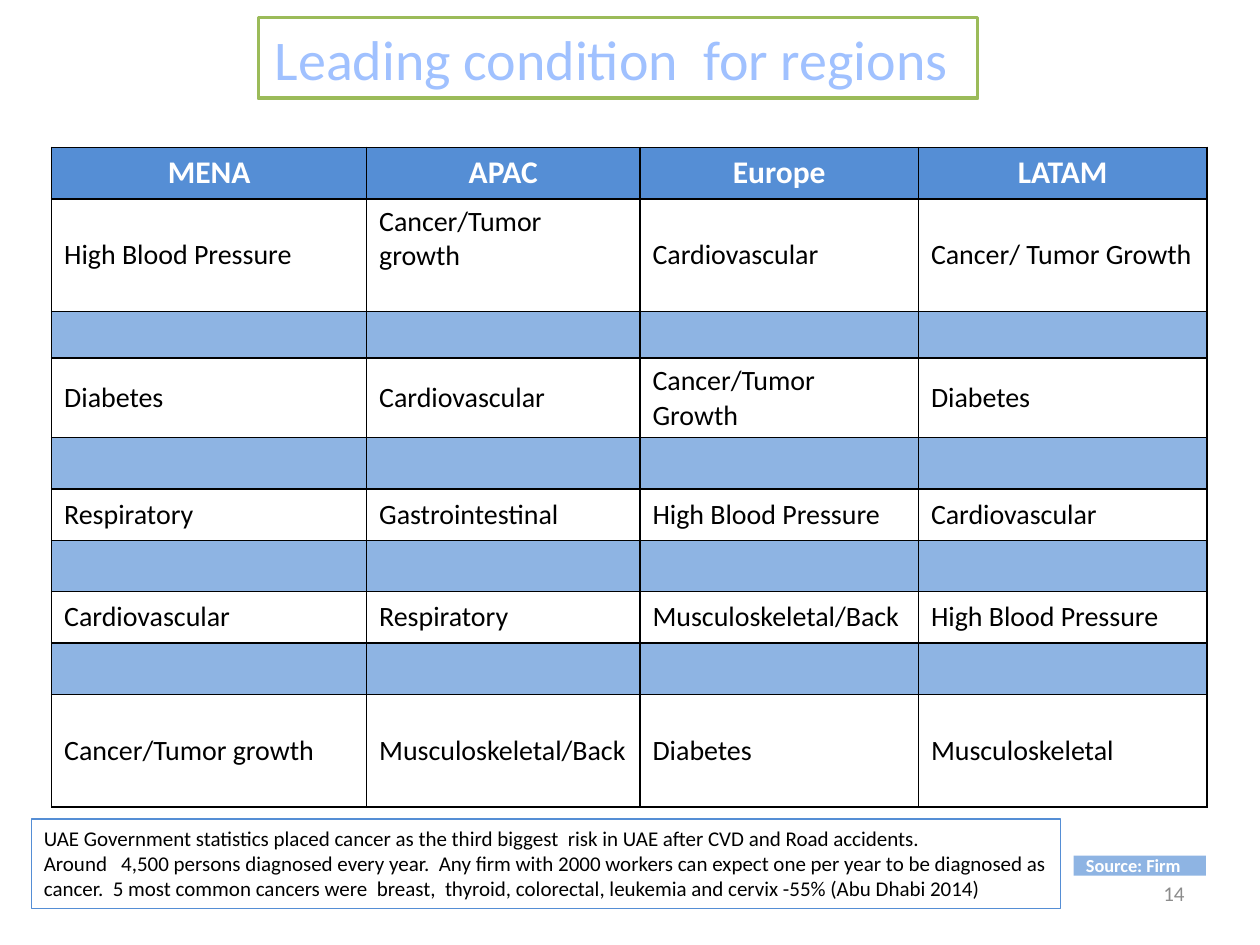
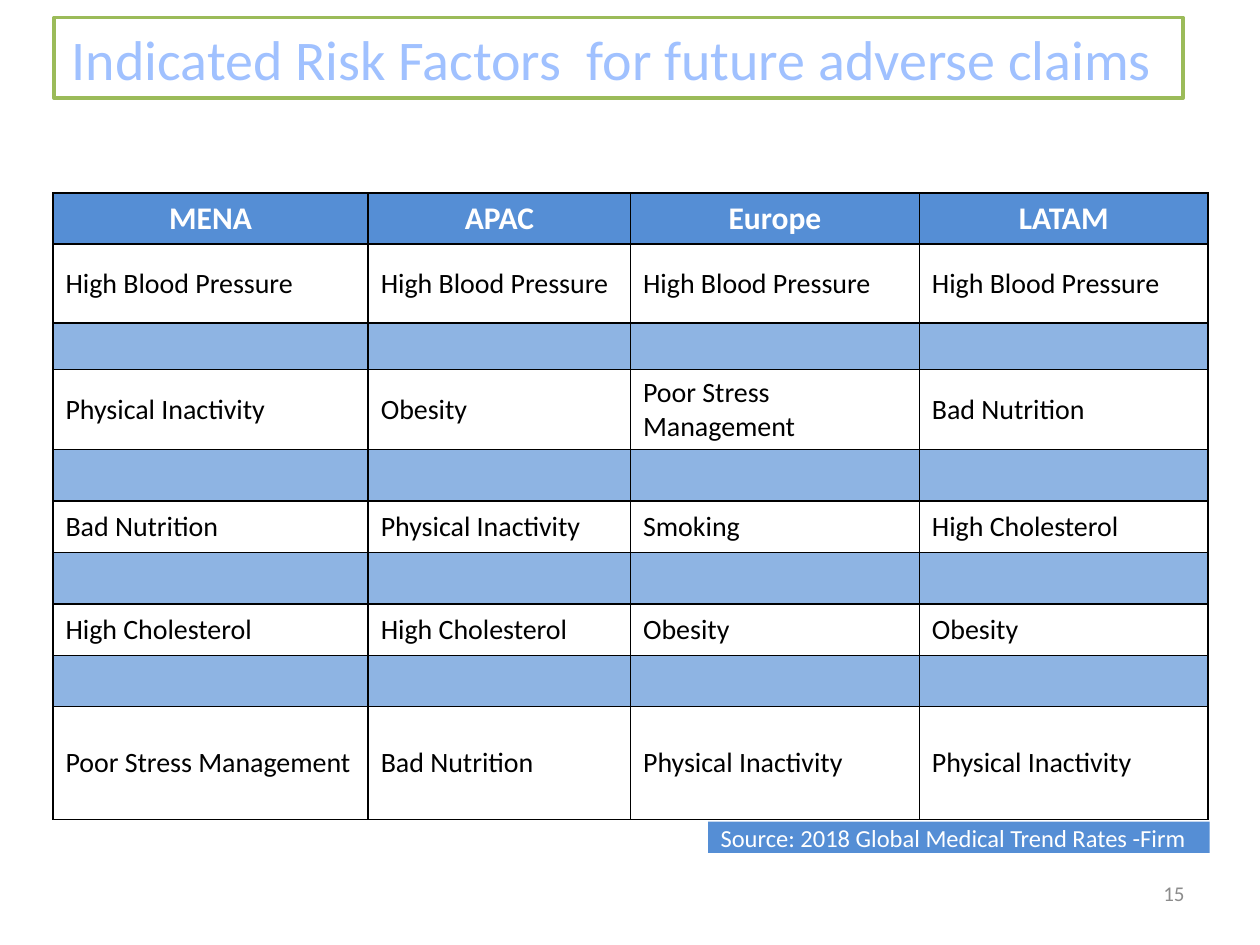
"""Build two slides that compare leading conditions and risk factors by region."""

from dataclasses import dataclass
from typing import Optional

from lxml.etree import SubElement
from pptx import Presentation
from pptx.dml.color import RGBColor
from pptx.enum.shapes import MSO_SHAPE
from pptx.enum.text import MSO_ANCHOR, PP_ALIGN
from pptx.oxml import parse_xml
from pptx.oxml.ns import nsdecls, qn
from pptx.util import Inches, Pt

SLIDE_WIDTH = Inches(10)
SLIDE_HEIGHT = Inches(7.5)
COLUMN = SLIDE_WIDTH / 100
ROW = SLIDE_HEIGHT / 75

FONT = "Calibri"
WHITE = RGBColor(0xFF, 0xFF, 0xFF)
BLACK = RGBColor(0x00, 0x00, 0x00)
GREY = RGBColor(0x8C, 0x8C, 0x8C)
GREEN = RGBColor(0x9B, 0xBB, 0x59)
BLUE = RGBColor(0x55, 0x8E, 0xD5)
PALE_BLUE = RGBColor(0x8E, 0xB4, 0xE3)
TITLE_OUTLINE = RGBColor(0x46, 0x7A, 0xB8)
SKY = RGBColor(0xA0, 0xC1, 0xFF)
MIST = RGBColor(0xBF, 0xD3, 0xF9)
NAVY = RGBColor(0x00, 0x3D, 0x85)
TITLE_GRADIENT = ((0, MIST), (9, SKY), (50, NAVY), (79, SKY), (100, MIST))

REGIONS = ("MENA", "APAC", "Europe", "LATAM")
HEADER_ROW, SPACER_ROW = 4.1, 4.1


@dataclass(frozen=True)
class Area:
    """A rectangle in grid columns and rows."""

    left: float
    top: float
    width: float
    height: float

    def place(self) -> tuple[int, int, int, int]:
        """Return left, top, width and height as lengths."""
        return (int(self.left * COLUMN), int(self.top * ROW),
                int(self.width * COLUMN), int(self.height * ROW))


@dataclass(frozen=True)
class Source:
    """The credit strip under a table."""

    text: str
    area: Area
    fill: RGBColor
    size: float
    bold: bool = False


@dataclass(frozen=True)
class RegionSlide:
    """One slide with a ranking for each region."""

    number: int
    title: str
    title_area: Area
    table_area: Area
    column_shares: tuple[float, ...]
    first_rank_height: float
    ranks: tuple[tuple[str, ...], ...]
    source: Source
    note: tuple[str, ...] = ()
    top_cell: Optional[tuple[int, int]] = None


NUMBER_AREA = Area(71.7, 68.3, 23.3, 5.2)
NOTE_AREA = Area(2.5, 65, 81.7, 7.1)

SLIDES = (
    RegionSlide(
        14, "Leading condition  for regions ", Area(20.5, 1.4, 57.1, 6.4),
        Area(4.1, 11.7, 91.7, 52.3), (25, 21.7, 22.1, 22.9), 9,
        (
            ("High Blood Pressure", "Cancer/Tumor growth", "Cardiovascular", "Cancer/ Tumor Growth"),
            ("Diabetes", "Cardiovascular", "Cancer/Tumor  Growth", "Diabetes"),
            ("Respiratory", "Gastrointestinal", "High Blood Pressure", "Cardiovascular"),
            ("Cardiovascular", "Respiratory", "Musculoskeletal/Back", "High Blood Pressure"),
            ("Cancer/Tumor growth", "Musculoskeletal/Back", "Diabetes", "Musculoskeletal"),
        ),
        Source("Source: Firm", Area(85.2, 67.9, 10.5, 1.6), PALE_BLUE, 10.5, True),
        note=(
            "UAE Government statistics placed cancer as the third biggest  risk in UAE "
            "after CVD and Road accidents.",
            "Around   4,500 persons diagnosed every year.  Any firm with 2000 workers can "
            "expect one per year to be diagnosed as cancer.  5 most common cancers were  "
            "breast,  thyroid, colorectal, leukemia and cervix -55% (Abu Dhabi 2014)",
        ),
        top_cell=(1, 1),
    ),
    RegionSlide(
        15, "Indicated Risk Factors  for future adverse claims ", Area(4.3, 1.4, 89.6, 6.4),
        Area(4.2, 15.3, 91.7, 49.7), (25, 20.8, 22.9, 22.9), 6.3,
        (
            ("High Blood Pressure",) * 4,
            ("Physical Inactivity", "Obesity", "Poor Stress Management", "Bad Nutrition"),
            ("Bad Nutrition", "Physical Inactivity", "Smoking", "High Cholesterol"),
            ("High Cholesterol", "High Cholesterol", "Obesity", "Obesity"),
            ("Poor Stress Management", "Bad Nutrition", "Physical Inactivity", "Physical Inactivity"),
        ),
        Source("Source: 2018 Global Medical Trend Rates -Firm", Area(56.2, 65.2, 39.8, 2.5), BLUE, 14),
    ),
)


def write(frame, *lines: str, size: float, color: RGBColor, bold: bool = False,
          align: PP_ALIGN = PP_ALIGN.LEFT) -> None:
    """Fill a text frame with one paragraph for each line."""
    for index, line in enumerate(lines):
        paragraph = frame.paragraphs[0] if index == 0 else frame.add_paragraph()
        paragraph.alignment = align
        run = paragraph.add_run()
        run.text = line
        run.font.name = FONT
        run.font.size = Pt(size)
        run.font.bold = bold
        run.font.color.rgb = color


def add_panel(slide, area: Area, fill: Optional[RGBColor] = None,
              line: Optional[RGBColor] = None, line_width: float = 0.75,
              anchor: MSO_ANCHOR = MSO_ANCHOR.MIDDLE, wrap: bool = True):
    """Draw a flat rectangle and return its text frame."""
    panel = slide.shapes.add_shape(MSO_SHAPE.RECTANGLE, *area.place())
    panel.shadow.inherit = False
    if fill is None:
        panel.fill.background()
    else:
        panel.fill.solid()
        panel.fill.fore_color.rgb = fill
    if line is None:
        panel.line.fill.background()
    else:
        panel.line.color.rgb = line
        panel.line.width = Pt(line_width)
    panel.text_frame.word_wrap = wrap
    panel.text_frame.vertical_anchor = anchor
    return panel.text_frame


def add_title(slide, text: str, area: Area) -> None:
    """Draw the framed title with gradient lettering."""
    frame = add_panel(slide, area, WHITE, GREEN, 2, wrap=False)
    write(frame, text, size=32, color=SKY, align=PP_ALIGN.CENTER)
    properties = frame.paragraphs[0].runs[0].font.fill._xPr
    solid = properties.find(qn("a:solidFill"))
    stops = "".join(f'<a:gs pos="{share * 1000}"><a:srgbClr val="{color}"/></a:gs>'
                    for share, color in TITLE_GRADIENT)
    solid.addprevious(parse_xml(
        f'<a:ln {nsdecls("a")} w="{Pt(0.83)}"><a:solidFill>'
        f'<a:srgbClr val="{TITLE_OUTLINE}"/></a:solidFill></a:ln>'))
    properties.replace(solid, parse_xml(
        f'<a:gradFill {nsdecls("a")}><a:gsLst>{stops}</a:gsLst>'
        '<a:lin ang="5400000"/></a:gradFill>'))


def style_cell(cell, fill: RGBColor) -> None:
    """Give a cell black borders and a solid fill."""
    properties = cell._tc.get_or_add_tcPr()
    for side in ("lnL", "lnR", "lnT", "lnB"):
        border = SubElement(properties, qn(f"a:{side}"), w=str(Pt(1)))
        solid = SubElement(border, qn("a:solidFill"))
        SubElement(solid, qn("a:srgbClr"), val=str(BLACK))
    cell.fill.solid()
    cell.fill.fore_color.rgb = fill


def add_region_table(slide, content: RegionSlide) -> None:
    """Draw the ranking table with a spacer row between ranks."""
    rows = [REGIONS]
    for rank in content.ranks:
        rows += [rank, ("",) * len(REGIONS)]
    rows.pop()
    heights = [HEADER_ROW, content.first_rank_height, 3.7, 6.3] + [SPACER_ROW] * 5 + [9]
    area = content.table_area
    table = slide.shapes.add_table(len(rows), len(REGIONS), *area.place()).table
    table.first_row = table.horz_banding = False
    for column, share in zip(table.columns, content.column_shares):
        column.width = int(area.width * COLUMN * share / sum(content.column_shares))
    for row_index, (texts, height) in enumerate(zip(rows, heights)):
        table.rows[row_index].height = int(area.height * ROW * height / sum(heights))
        for column_index, text in enumerate(texts):
            cell = table.cell(row_index, column_index)
            if row_index == 0:
                style_cell(cell, BLUE)
                write(cell.text_frame, text, size=18, color=WHITE, bold=True,
                      align=PP_ALIGN.CENTER)
            elif text:
                style_cell(cell, WHITE)
                at_top = (row_index, column_index) == content.top_cell
                cell.vertical_anchor = MSO_ANCHOR.TOP if at_top else MSO_ANCHOR.MIDDLE
                write(cell.text_frame, text, size=16, color=BLACK)
            else:
                style_cell(cell, PALE_BLUE)
                SubElement(cell.text_frame.paragraphs[0]._p, qn("a:endParaRPr"), sz="1400")


def add_source(slide, source: Source) -> None:
    """Draw the credit strip."""
    frame = add_panel(slide, source.area, source.fill)
    frame.margin_top = frame.margin_bottom = frame.margin_right = 0
    write(frame, source.text, size=source.size, color=WHITE, bold=source.bold)


def add_number(slide, number: int) -> None:
    """Write the slide number at the lower right."""
    frame = slide.shapes.add_textbox(*NUMBER_AREA.place()).text_frame
    frame.word_wrap = True
    frame.vertical_anchor = MSO_ANCHOR.MIDDLE
    write(frame, str(number), size=12, color=GREY, align=PP_ALIGN.RIGHT)


def main() -> None:
    """Build and save the presentation."""
    presentation = Presentation()
    presentation.slide_width = SLIDE_WIDTH
    presentation.slide_height = SLIDE_HEIGHT
    for content in SLIDES:
        slide = presentation.slides.add_slide(presentation.slide_layouts[6])
        add_number(slide, content.number)
        add_region_table(slide, content)
        add_source(slide, content.source)
        add_title(slide, content.title, content.title_area)
        if content.note:
            note = add_panel(slide, NOTE_AREA, line=BLUE, anchor=MSO_ANCHOR.TOP)
            write(note, *content.note, size=12, color=BLACK)
    presentation.save("out.pptx")


if __name__ == "__main__":
    main()
